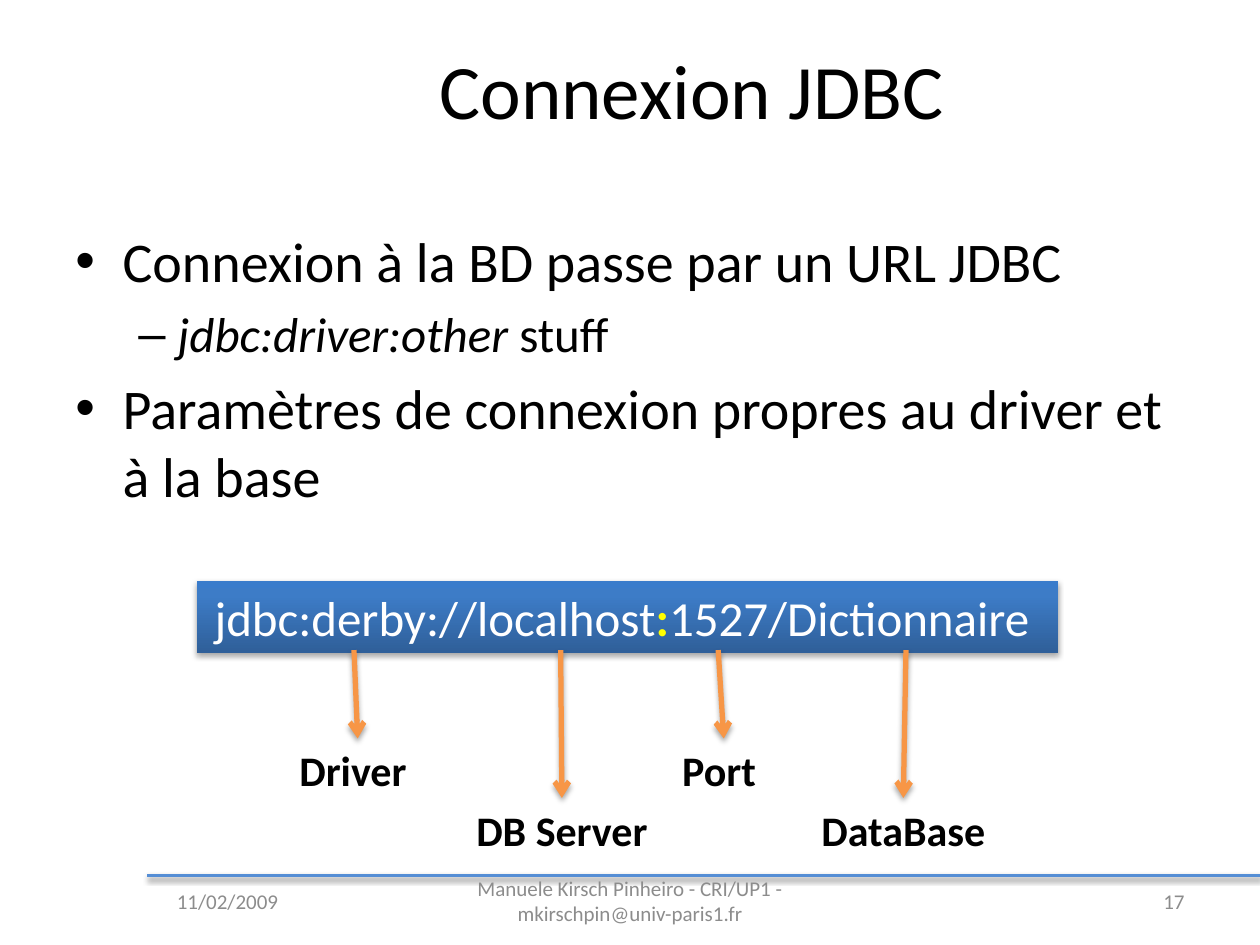
from lxml import etree
from pptx import Presentation
from pptx.dml.color import RGBColor
from pptx.enum.shapes import MSO_CONNECTOR, MSO_SHAPE
from pptx.enum.text import MSO_ANCHOR, MSO_AUTO_SIZE, PP_ALIGN
from pptx.oxml import parse_xml
from pptx.oxml.ns import nsdecls, qn
from pptx.util import Pt

BLACK = RGBColor(0x00, 0x00, 0x00)
WHITE = RGBColor(0xFF, 0xFF, 0xFF)
YELLOW = RGBColor(0xFF, 0xFF, 0x00)
GREY = RGBColor(0x8C, 0x8C, 0x8C)
ORANGE = RGBColor(0xF7, 0x96, 0x46)
RULE_BLUE = RGBColor(0x55, 0x8E, 0xD5)
URL_GRADIENT = [
    (0, RGBColor(0x2F, 0x5F, 0x99)),
    (80, RGBColor(0x3D, 0x7C, 0xC7)),
    (100, RGBColor(0x3A, 0x7C, 0xCB)),
]

LEFT, CENTER, RIGHT = PP_ALIGN.LEFT, PP_ALIGN.CENTER, PP_ALIGN.RIGHT
TOP, MIDDLE = MSO_ANCHOR.TOP, MSO_ANCHOR.MIDDLE
FIT_SHAPE = MSO_AUTO_SIZE.SHAPE_TO_FIT_TEXT
STRAIGHT = MSO_CONNECTOR.STRAIGHT
RECTANGLE = MSO_SHAPE.RECTANGLE
TOP_SIDE = 0

# Per level: bullet, text size, left margin, hanging indent (points)
BULLET_LEVELS = [("•", 32, 27, 27), ("–", 28, 58.5, 22.5)]


class SlideBuilder:
    def __init__(self, slide, font_name):
        self.slide = slide
        self.font_name = font_name

    def add_runs(self, paragraph, runs, size, color):
        """Add (text, overrides) runs, where overrides are bold, italic or color."""
        for text, overrides in runs:
            run = paragraph.add_run()
            run.text = text
            run.font.name = self.font_name
            run.font.size = Pt(size)
            run.font.bold = overrides.get("bold", False)
            run.font.italic = overrides.get("italic", False)
            run.font.color.rgb = overrides.get("color", color)

    def fill_text(self, shape, runs, size, color, align, anchor, wrap=True):
        frame = shape.text_frame
        frame.word_wrap = wrap
        frame.vertical_anchor = anchor
        if not wrap:
            frame.auto_size = FIT_SHAPE
        paragraph = frame.paragraphs[0]
        paragraph.alignment = align
        self.add_runs(paragraph, runs, size, color)

    def title(self, text, left, top, width, height):
        shape = self.slide.shapes.title
        shape.left, shape.top = Pt(left), Pt(top)
        shape.width, shape.height = Pt(width), Pt(height)
        self.fill_text(shape, [(text, {})], 44, BLACK, CENTER, MIDDLE)

    def text(self, runs, box, size, color, align=CENTER, anchor=MIDDLE, wrap=True):
        shape = self.slide.shapes.add_textbox(*map(Pt, box))
        self.fill_text(shape, runs, size, color, align, anchor, wrap)
        return shape

    def bullets(self, items, box):
        frame = self.slide.shapes.add_textbox(*map(Pt, box)).text_frame
        frame.word_wrap = True
        for index, (level, runs) in enumerate(items):
            bullet, size, margin, hanging = BULLET_LEVELS[level]
            paragraph = frame.add_paragraph() if index else frame.paragraphs[0]
            paragraph.level = level
            paragraph.space_before = Pt(0.2 * size if index else 0)
            properties = paragraph._p.get_or_add_pPr()
            properties.set("marL", str(Pt(margin)))
            properties.set("indent", str(-Pt(hanging)))
            etree.SubElement(properties, qn("a:buFont")).set("typeface", "Arial")
            etree.SubElement(properties, qn("a:buChar")).set("char", bullet)
            self.add_runs(paragraph, runs, size, BLACK)

    def shadow(self, shape, opacity, distance):
        """Cast a soft black shadow straight down."""
        shape._element.spPr.append(parse_xml(
            f'<a:effectLst {nsdecls("a")}><a:outerShdw blurRad="{Pt(3.1)}" '
            f'dist="{Pt(distance)}" dir="5400000" rotWithShape="0">'
            f'<a:srgbClr val="000000"><a:alpha val="{opacity * 1000}"/></a:srgbClr>'
            '</a:outerShdw></a:effectLst>'))

    def gradient_box(self, runs, box, stops, size, color):
        shape = self.slide.shapes.add_shape(RECTANGLE, *map(Pt, box))
        shape.line.fill.background()
        stop_xml = "".join(
            f'<a:gs pos="{position * 1000}"><a:srgbClr val="{stop}"/></a:gs>'
            for position, stop in stops)
        properties = shape._element.spPr
        properties.find(qn("a:prstGeom")).addnext(parse_xml(
            f'<a:gradFill {nsdecls("a")} rotWithShape="1"><a:gsLst>{stop_xml}</a:gsLst>'
            '<a:lin ang="16200000" scaled="0"/></a:gradFill>'))
        self.shadow(shape, 35, 1.8)
        self.fill_text(shape, runs, size, color, CENTER, TOP, wrap=False)

    def line(self, start, end, color, width, opacity, distance):
        connector = self.slide.shapes.add_connector(STRAIGHT, *map(Pt, start + end))
        connector.line.color.rgb = color
        connector.line.width = Pt(width)
        self.shadow(connector, opacity, distance)
        return connector

    def labelled_arrow(self, text, start, left, top, width):
        """Draw an arrow from start down to the top of a bold label."""
        label = self.text([(text, {"bold": True})], (left, top, width, 36),
                          24, BLACK, anchor=TOP, wrap=False)
        arrow = self.line(start, (left + width / 2, top), ORANGE, 3, 35, 1.8)
        arrow.end_connect(label, TOP_SIDE)
        tail = etree.SubElement(arrow.line._get_or_add_ln(), qn("a:tailEnd"))
        tail.set("type", "arrow")


def main():
    presentation = Presentation()
    presentation.slide_width, presentation.slide_height = Pt(720), Pt(540)
    slide = presentation.slides.add_slide(presentation.slide_layouts[5])
    builder = SlideBuilder(slide, "Calibri")

    footer_top, footer_height = 500.4, 28.8
    builder.line((84.2, footer_top), (720, footer_top), RULE_BLUE, 2, 38, 1.6)
    builder.title("Connexion JDBC", 106.6, 5.8, 577.4, 90)
    builder.bullets([
        (0, [("Connexion à la BD passe par un URL JDBC", {})]),
        (1, [("jdbc:driver:other ", {"italic": True}), ("stuff", {})]),
        (0, [("Paramètres de connexion propres au driver et à la base", {})]),
    ], (36, 126, 648, 356.4))

    for text, left, width, align in [
        ("11/02/2009", 46, 168, CENTER),
        ("Manuele Kirsch Pinheiro - CRI/UP1 - mkirschpin@univ-paris1.fr",
         246, 228, CENTER),
        ("17", 516, 168, RIGHT),
    ]:
        builder.text([(text, {})], (left, footer_top, width, footer_height),
                     12, GREY, align)

    builder.gradient_box([
        ("jdbc:derby://localhost", {}),
        (":", {"bold": True, "color": YELLOW}),
        ("1527/Dictionnaire ", {}),
    ], (112.5, 332, 492, 41), URL_GRADIENT, 28, WHITE)

    arrow_top, upper_row, lower_row = 371.5, 422, 456
    for text, arrow_left, label_left, label_top, label_width in [
        ("Driver ", 202.3, 163.4, upper_row, 82),
        ("DB Server", 320.4, 264.2, lower_row, 113.8),
        ("Port ", 410.4, 382.3, upper_row, 62.6),
        ("DataBase", 517.7, 461.5, lower_row, 109.4),
    ]:
        builder.labelled_arrow(text, (arrow_left, arrow_top),
                               label_left, label_top, label_width)

    presentation.save("out.pptx")


if __name__ == "__main__":
    main()
